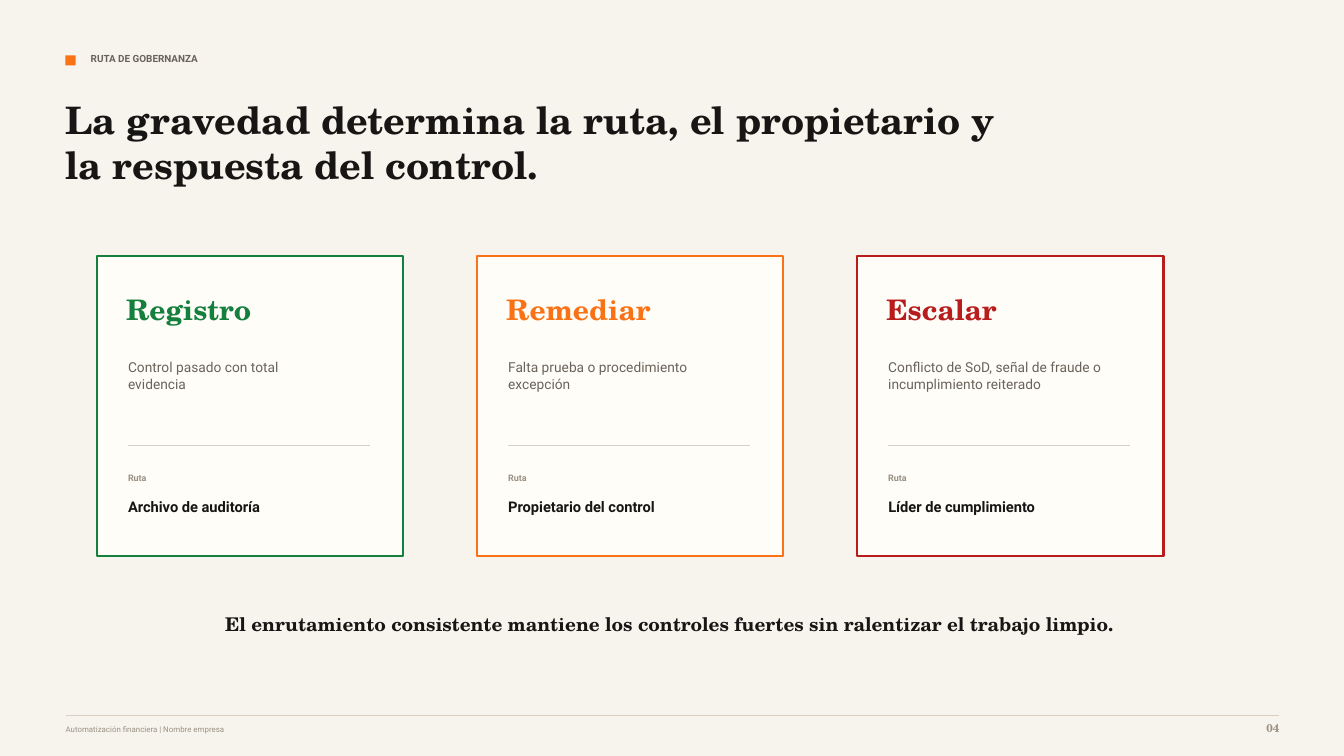
"""Build the governance route slide with its three severity cards."""
from dataclasses import dataclass

from lxml import etree
from pptx import Presentation
from pptx import util as u
from pptx.dml.color import RGBColor
from pptx.enum import shapes, text
from pptx.oxml.ns import qn

SANS, SERIF = "Roboto", "TeX Gyre Schola"
INK, GRAY, MUTED, RULE = "171614", "69635A", "9A9184", "D9D0C3"
PAPER, CARD_FILL, ORANGE = "F7F4EE", "FFFDF8", "F97316"
MARGIN = 0.65
CARD_LEFT, CARD_TOP, CARD_PITCH = 0.96, 2.54, 3.77
CARD_WIDTH, CARD_HEIGHT = 3.04, 2.98


@dataclass(frozen=True)
class Style:
    """Look of a piece of text."""
    font: str
    size: float
    color: str
    bold: bool = True
    align: text.PP_ALIGN = text.PP_ALIGN.LEFT


@dataclass(frozen=True)
class Card:
    """One severity level and where it is routed."""
    heading: str
    condition: tuple[str, ...]
    owner: str
    color: str


CARDS = (
    Card("Registro", ("Control pasado con total", "evidencia"),
         "Archivo de auditoría", "15803D"),
    Card("Remediar", ("Falta prueba o procedimiento", "excepción"),
         "Propietario del control", ORANGE),
    Card("Escalar", ("Conflicto de SoD, señal de fraude o", "incumplimiento reiterado"),
         "Líder de cumplimiento", "B91C1C"),
)


def paint(target, color: str) -> None:
    """Set a fill to a solid hex colour."""
    target.solid()
    target.fore_color.rgb = RGBColor.from_string(color)


def place(shape, left: float, top: float, width: float, height: float) -> None:
    """Move and size a shape in inches."""
    shape.left, shape.top = u.Inches(left), u.Inches(top)
    shape.width, shape.height = u.Inches(width), u.Inches(height)


def write(shape, lines: tuple[str, ...], style: Style) -> None:
    """Fill a shape with one paragraph per line."""
    frame = shape.text_frame
    frame.word_wrap = True
    frame.auto_size = text.MSO_AUTO_SIZE.NONE
    frame.vertical_anchor = text.MSO_ANCHOR.TOP
    frame.margin_left = frame.margin_right = frame.margin_top = frame.margin_bottom = 0
    frame.text = "\n".join(lines)
    for paragraph in frame.paragraphs:
        paragraph.alignment = style.align
        paragraph.line_spacing = 1.0
        font = paragraph.font
        font.name, font.size, font.bold = style.font, u.Pt(style.size), style.bold
        paint(font.fill, style.color)


def add_text(slide, left: float, top: float, width: float, height: float,
             style: Style, *lines: str) -> None:
    """Add a text box."""
    box = slide.shapes.add_textbox(0, 0, 0, 0)
    place(box, left, top, width, height)
    write(box, lines, style)


def add_box(slide, left: float, top: float, width: float, height: float,
            fill: str, outline: str | None = None) -> None:
    """Add a rectangle with an optional outline."""
    box = slide.shapes.add_shape(shapes.MSO_SHAPE.RECTANGLE, 0, 0, 0, 0)
    place(box, left, top, width, height)
    box.shadow.inherit = False
    paint(box.fill, fill)
    if outline:
        paint(box.line.fill, outline)
        box.line.width = u.Pt(1.5)
    else:
        box.line.fill.background()


def add_rule(slide, left: float, top: float, width: float) -> None:
    """Add a thin horizontal line."""
    rule = slide.shapes.add_connector(
        shapes.MSO_CONNECTOR.STRAIGHT, u.Inches(left), u.Inches(top),
        u.Inches(left + width), u.Inches(top))
    paint(rule.line.fill, RULE)
    rule.line.width = u.Pt(0.75)
    etree.SubElement(rule._element.spPr, qn("a:effectLst"))


def add_card(slide, left: float, card: Card) -> None:
    """Add a severity card at the given left edge."""
    inner = left + 0.31
    add_box(slide, left, CARD_TOP, CARD_WIDTH, CARD_HEIGHT, CARD_FILL, card.color)
    add_text(slide, left + 0.29, 2.9, 2.29, 0.35,
             Style(SERIF, 20.2, card.color), card.heading)
    add_text(slide, inner, 3.56, 2.33, 0.52,
             Style(SANS, 9.8, GRAY, bold=False), *card.condition)
    add_rule(slide, inner, 4.42, 2.4)
    add_text(slide, inner, 4.69, 1.67, 0.15, Style(SANS, 6.4, MUTED), "Ruta")
    add_text(slide, inner, 4.94, 2.29, 0.23, Style(SANS, 10.5, INK), card.owner)


def main() -> None:
    """Build and save the slide."""
    presentation = Presentation()
    presentation.slide_width = u.Inches(13.33)
    presentation.slide_height = u.Inches(7.5)
    slide = presentation.slides.add_slide(presentation.slide_layouts[5])
    paint(slide.background.fill, PAPER)

    add_box(slide, MARGIN, 0.55, 0.1, 0.1, ORANGE)
    add_text(slide, 0.9, 0.52, 5.83, 0.19, Style(SANS, 7.1, GRAY), "RUTA DE GOBERNANZA")
    title = slide.shapes.title
    place(title, MARGIN, 0.96, 9.38, 1.02)
    write(title, ("La gravedad determina la ruta, el propietario y "
                  "la respuesta del control.",), Style(SERIF, 27, INK))

    for index, card in enumerate(CARDS):
        add_card(slide, CARD_LEFT + index * CARD_PITCH, card)

    add_text(slide, 1.85, 6.08, 9.58, 0.29,
             Style(SERIF, 13.5, INK, align=text.PP_ALIGN.CENTER),
             "El enrutamiento consistente mantiene los controles fuertes "
             "sin ralentizar el trabajo limpio.")
    add_rule(slide, MARGIN, 7.1, 12.04)
    add_text(slide, MARGIN, 7.19, 7.92, 0.15, Style(SANS, 5.6, MUTED, bold=False),
             "Automatización financiera | Nombre empresa")
    add_text(slide, 12.19, 7.15, 0.5, 0.19,
             Style(SERIF, 8.2, MUTED, align=text.PP_ALIGN.RIGHT), "04")
    presentation.save("out.pptx")


if __name__ == "__main__":
    main()
